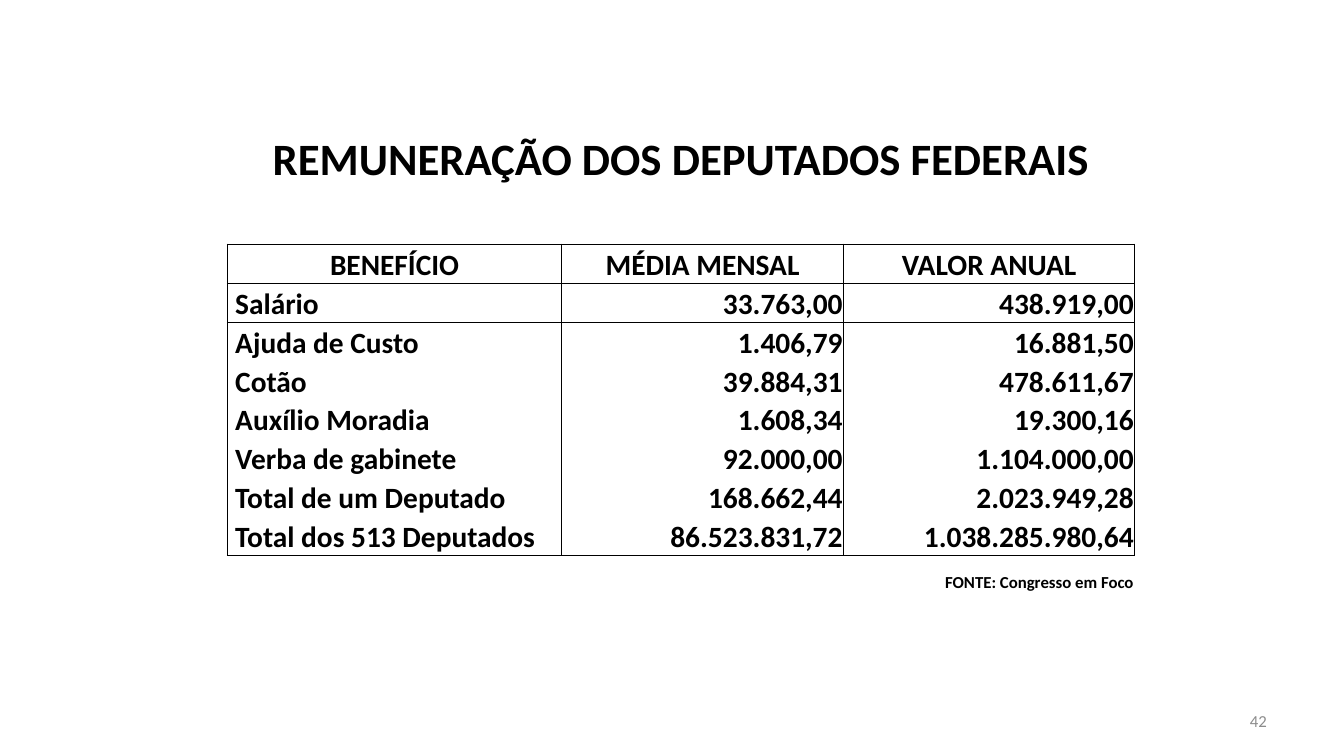
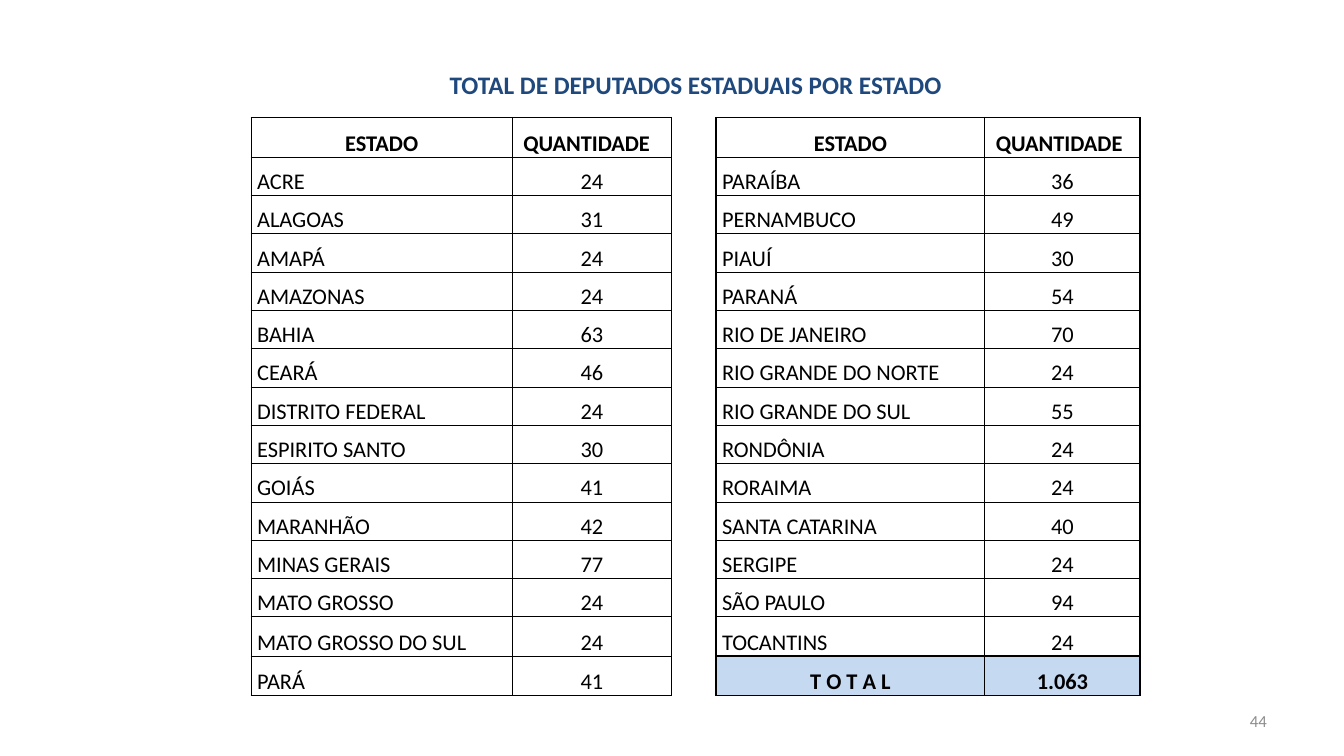
from dataclasses import dataclass

from lxml import etree
from pptx import Presentation
from pptx.dml.color import RGBColor
from pptx.enum.text import MSO_ANCHOR, PP_ALIGN
from pptx.oxml.ns import qn
from pptx.util import Pt

LEFT, MID, RIGHT = PP_ALIGN.LEFT, PP_ALIGN.CENTER, PP_ALIGN.RIGHT
CENTER, BOTTOM = MSO_ANCHOR.MIDDLE, MSO_ANCHOR.BOTTOM
BLANK = 6

FONT = "Calibri"
COLORS = {"ink": "000000", "blue": "1F497D", "gray": "8C8C8C", "total": "C5D9F1"}
PLAIN_STYLE = "{2D5ABB26-0587-4C30-8999-92F81FD0307C}"
THIN, THICK, SLIM = 0.5, 1, 0.7
HEAD, BODY = 2, 3


@dataclass
class Style:
    size: float
    bold: bool = False
    color: str = "ink"
    align: PP_ALIGN = MID
    pad: float = SLIM


@dataclass
class Block:
    top: int
    left: int
    bottom: int
    right: int
    rule: float = 0
    post: float = THIN


def format_text(frame, text: str, style: Style) -> None:
    frame.text = text
    para = frame.paragraphs[0]
    para.alignment = style.align
    for run in para.runs:
        font = run.font
        font.name, font.size, font.bold = FONT, Pt(style.size), style.bold
        font.color.rgb = RGBColor.from_string(COLORS[style.color])


def add_page(slide, number: str) -> None:
    frame = slide.shapes.add_textbox(Pt(688), Pt(500.4), Pt(224), Pt(28.8)).text_frame
    frame.word_wrap = True
    frame.vertical_anchor = CENTER
    format_text(frame, number, Style(12, color="gray", align=RIGHT))


def fill_cell(cell, text: str, style: Style) -> None:
    cell.vertical_anchor = BOTTOM
    cell.margin_left = Pt(style.pad)
    format_text(cell.text_frame, text, style)


def add_table(slide, left: float, top: float, cols: list[float], rows: list[float]):
    table = slide.shapes.add_table(
        len(rows), len(cols), Pt(left), Pt(top), Pt(sum(cols)), Pt(sum(rows))
    ).table
    table.horz_banding = False
    table._tbl.tblPr.find(qn("a:tableStyleId")).text = PLAIN_STYLE
    for col, width in zip(table.columns, cols):
        col.width = Pt(width)
    for row, height in zip(table.rows, rows):
        row.height = Pt(height)
    for cell in table.iter_cells():
        cell.margin_left = cell.margin_right = cell.margin_top = Pt(SLIM)
        cell.margin_bottom = 0
        para = cell.text_frame.paragraphs[0]._p
        etree.SubElement(para, qn("a:endParaRPr"), sz=str(8 * 100))
    return table


def add_title(table, text: str, style: Style) -> None:
    table.cell(0, 0).merge(table.cell(0, len(table.columns) - 1))
    fill_cell(table.cell(0, 0), text, style)


def set_edges(cell, edges: dict[str, float]) -> None:
    props = cell._tc.get_or_add_tcPr()
    for side, width in edges.items():
        if width:
            line = etree.SubElement(props, qn(f"a:ln{side}"), w=str(int(Pt(width))))
            fill = etree.SubElement(line, qn("a:solidFill"))
            etree.SubElement(fill, qn("a:srgbClr"), val=COLORS["ink"])


def frame_block(table, block: Block) -> None:
    for row in range(block.top, block.bottom + 1):
        for col in range(block.left, block.right + 1):
            set_edges(table.cell(row, col), {
                "L": THICK if col == block.left else block.post,
                "R": THICK if col == block.right else block.post,
                "T": THICK if row == block.top else block.rule,
                "B": THICK if row == block.bottom else block.rule,
            })


def fill_rows(table, left: int, rows: list[tuple[str, ...]], styles: list[Style]) -> None:
    for row, line in enumerate(rows, BODY):
        for col, (text, style) in enumerate(zip(line, styles), left):
            fill_cell(table.cell(row, col), text, style)


def add_pay(deck) -> None:
    slide = deck.slides.add_slide(deck.slide_layouts[BLANK])
    heads = ("BENEFÍCIO", "MÉDIA MENSAL", "VALOR ANUAL")
    rows = [
        ("Salário", "33.763,00", "438.919,00"),
        ("Ajuda de Custo", "1.406,79", "16.881,50"),
        ("Cotão", "39.884,31", "478.611,67"),
        ("Auxílio Moradia", "1.608,34", "19.300,16"),
        ("Verba de gabinete", "92.000,00", "1.104.000,00"),
        ("Total de um Deputado", "168.662,44", "2.023.949,28"),
        ("Total dos 513 Deputados", "86.523.831,72", "1.038.285.980,64"),
    ]
    last = BODY + len(rows)
    head = 3
    highs = [40, 28, 12.1, 28.3, *[27.7] * len(rows), 27.4]
    table = add_table(slide, 162.5, 94.3, [238.7, 201.4, 208], highs)
    add_title(table, "REMUNERAÇÃO DOS DEPUTADOS FEDERAIS", Style(32, True))
    table.cell(1, 0).merge(table.cell(1, 2))
    money = Style(21, True, align=RIGHT)
    for col, text in enumerate(heads):
        fill_cell(table.cell(head, col), text, Style(21, True))
    for row, line in enumerate(rows, head + 1):
        for col, text in enumerate(line):
            fill_cell(table.cell(row, col), text, money if col else Style(21, True, align=LEFT, pad=5.5))
    frame_block(table, Block(head, 0, head, 2))
    frame_block(table, Block(head + 1, 0, last, 2))
    fill_cell(table.cell(last + 1, 2), "FONTE: Congresso em Foco", Style(12, True, align=RIGHT))
    add_page(slide, "42")


def add_states(deck) -> None:
    slide = deck.slides.add_slide(deck.slide_layouts[BLANK])
    first = [
        ("ACRE", "24"), ("ALAGOAS", "31"), ("AMAPÁ", "24"), ("AMAZONAS", "24"),
        ("BAHIA", "63"), ("CEARÁ", "46"), ("DISTRITO FEDERAL", "24"),
        ("ESPIRITO SANTO", "30"), ("GOIÁS", "41"), ("MARANHÃO", "42"),
        ("MINAS GERAIS", "77"), ("MATO GROSSO", "24"),
        ("MATO GROSSO DO SUL", "24"), ("PARÁ", "41"),
    ]
    second = [
        ("PARAÍBA", "36"), ("PERNAMBUCO", "49"), ("PIAUÍ", "30"), ("PARANÁ", "54"),
        ("RIO DE JANEIRO", "70"), ("RIO GRANDE DO NORTE", "24"),
        ("RIO GRANDE DO SUL", "55"), ("RONDÔNIA", "24"), ("RORAIMA", "24"),
        ("SANTA CATARINA", "40"), ("SERGIPE", "24"), ("SÃO PAULO", "94"),
        ("TOCANTINS", "24"),
    ]
    last = HEAD + len(first)
    highs = [29.4, 11.3, 28.4, *[27.36] * (len(first) - 2), 28.1, 28.1]
    table = add_table(slide, 179.4, 43.2, [186.5, 113.8, 31.8, 192, 110.9], highs)
    add_title(table, "TOTAL DE DEPUTADOS ESTADUAIS POR ESTADO", Style(18, True, "blue"))
    styles = [Style(16, align=LEFT, pad=4.3), Style(16)]
    for left, rows in ((0, first), (3, second)):
        fill_cell(table.cell(HEAD, left), "ESTADO", Style(16, True))
        fill_cell(table.cell(HEAD, left + 1), "QUANTIDADE", Style(16, True, align=LEFT, pad=7.9))
        fill_rows(table, left, rows, styles)
        frame_block(table, Block(HEAD, left, HEAD, left + 1))
        frame_block(table, Block(BODY, left, HEAD + len(rows), left + 1, THIN))
    frame_block(table, Block(last, 3, last, 4, post=0))
    for col, text in enumerate(("T O T A L", "1.063"), 3):
        cell = table.cell(last, col)
        fill_cell(cell, text, Style(16, True))
        cell.fill.solid()
        cell.fill.fore_color.rgb = RGBColor.from_string(COLORS["total"])
    add_page(slide, "44")


def main() -> None:
    deck = Presentation()
    deck.slide_width, deck.slide_height = Pt(960), Pt(540)
    add_pay(deck)
    add_states(deck)
    deck.save("out.pptx")


if __name__ == "__main__":
    main()
